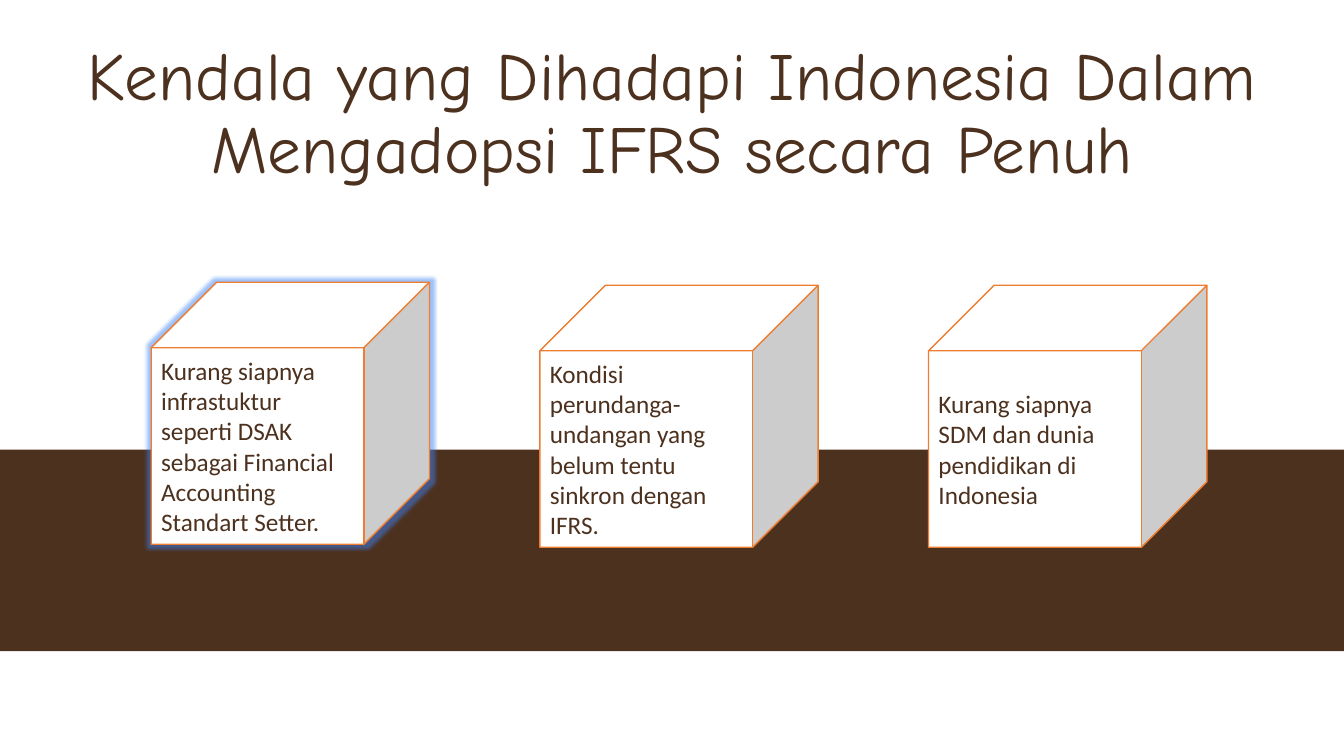
"""Slide on the obstacles Indonesia faces in fully adopting IFRS."""
from lxml.etree import SubElement
from pptx import Presentation
from pptx.dml.color import RGBColor
from pptx.enum.shapes import MSO_SHAPE as Shape
from pptx.enum.text import MSO_ANCHOR as Anchor, PP_ALIGN as Align
from pptx.oxml.ns import qn
from pptx.util import Inches, Pt

BROWN, WHITE, ORANGE, BLUE = "4D311F", "FFFFFF", "ED7D31", "3B82F6"


def color(value):
    return RGBColor.from_string(value)


def write(shape, text, size, font, align=Align.LEFT, spacing=1.0):
    frame = shape.text_frame
    frame.word_wrap = True
    frame.vertical_anchor = Anchor.MIDDLE
    paragraph = frame.paragraphs[0]
    paragraph.alignment = align
    paragraph.line_spacing = spacing
    run = paragraph.add_run()
    run.text = text
    run.font.size = Pt(size)
    run.font.name = font
    run.font.color.rgb = color(BROWN)


deck = Presentation()
deck.slide_width, deck.slide_height = Inches(13.33), Inches(7.5)
slide = deck.slides.add_slide(deck.slide_layouts[6])
slide.background.fill.solid()
slide.background.fill.fore_color.rgb = color(WHITE)

band = slide.shapes.add_shape(
    Shape.RECTANGLE, 0, Inches(4.46), deck.slide_width, Inches(2))
band.shadow.inherit = False
band.fill.solid()
band.fill.fore_color.rgb = color(BROWN)
band.line.fill.background()

title = slide.shapes.add_textbox(0, Inches(0.73), deck.slide_width, Inches(0.83))
write(title, "Kendala yang Dihadapi Indonesia Dalam Mengadopsi IFRS secara Penuh",
      size=48, font="Comic Neue", align=Align.CENTER, spacing=0.9)

obstacles = [
    (2.8, "Kurang siapnya infrastuktur seperti DSAK sebagai Financial "
          "Accounting Standart Setter."),
    (2.83, "Kondisi perundanga-undangan yang belum tentu sinkron dengan IFRS."),
    (2.83, "Kurang siapnya SDM dan dunia pendidikan di Indonesia"),
]
cubes = []
for index, (top, obstacle) in enumerate(obstacles):
    cube = slide.shapes.add_shape(
        Shape.CUBE, Inches(1.5 + 3.855 * index), Inches(top), Inches(2.76), Inches(2.6))
    cube.shadow.inherit = False
    cube.fill.solid()
    cube.fill.fore_color.rgb = color(WHITE)
    cube.line.color.rgb = color(ORANGE)
    cube.line.width = Pt(1)
    write(cube, obstacle, size=18, font="Calibri")
    cubes.append(cube)

effects = cubes[0].element.spPr.find(qn("a:effectLst"))
glow = SubElement(effects, qn("a:glow"), rad=str(Pt(5)))
tint = SubElement(glow, qn("a:srgbClr"), val=BLUE)
SubElement(tint, qn("a:alpha"), val="50000")

deck.save("out.pptx")
